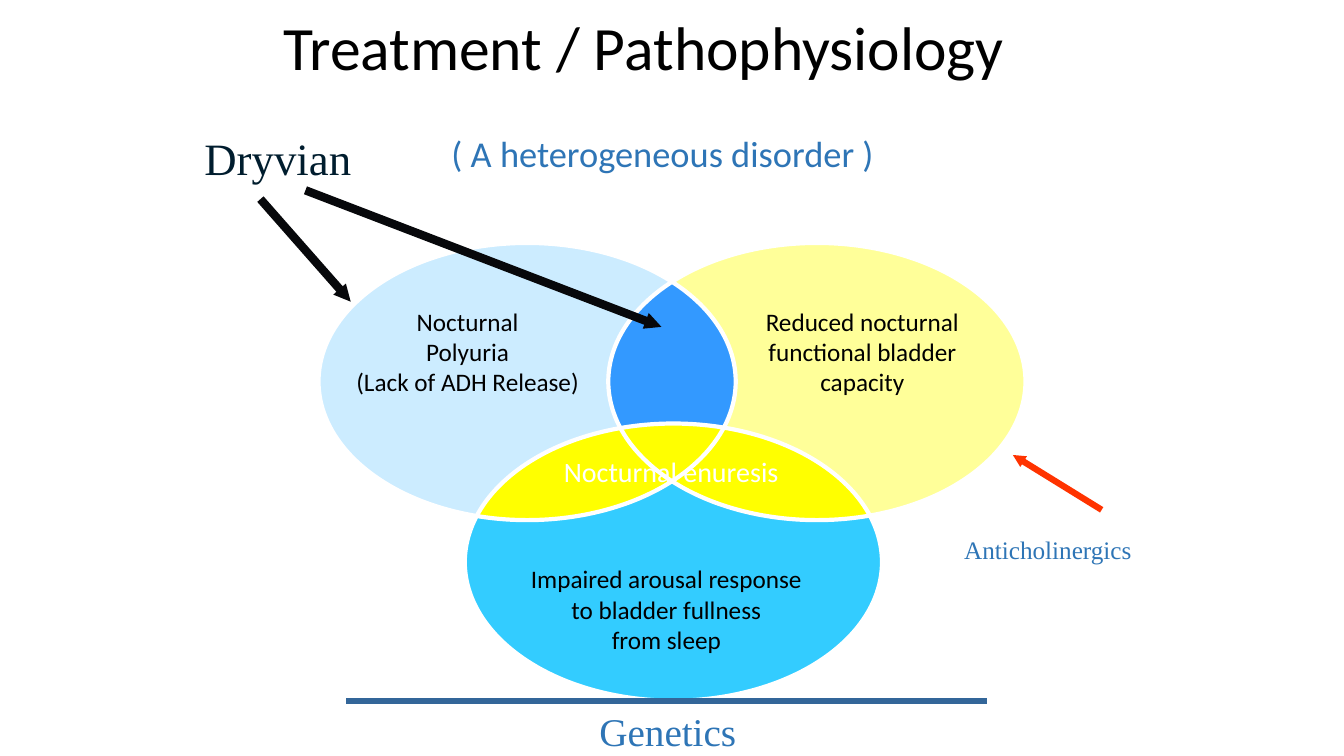
import math
import pptx
import pptx.dml.color
import pptx.enum.shapes
import pptx.enum.text
import pptx.oxml.ns
import pptx.util
from lxml import etree

Pt = pptx.util.Pt

COLORS = {
    "black": "000000", "white": "FFFFFF", "blue text": "2E75B6", "navy": "001D2E",
    "ink": "07080B", "red": "FF3300", "steel": "336699", "cyan": "33CCFF",
    "yellow": "FFFF00", "cream": "FFFF99", "blue": "3399FF", "pale blue": "CCECFF",
}

# The three causes share one ellipse size; each has its own centre.
RADIUS_X, RADIUS_Y = 149, 99
CENTRES = {"arousal": (481, 401.5), "polyuria": (376.5, 272.5), "bladder": (583.5, 272.5)}

# Crossing points: the two ellipses, and which of their two crossings.
CROSSINGS = {
    "top": ("polyuria", "bladder", -1),
    "middle": ("polyuria", "bladder", 1),
    "outer left": ("polyuria", "arousal", 1),
    "inner right": ("polyuria", "arousal", -1),
    "inner left": ("bladder", "arousal", -1),
    "outer right": ("bladder", "arousal", 1),
}

# Each region: colour, then arcs as (ellipse, from, to, turn); turn 1 is clockwise.
REGIONS = [
    ("cyan", [("arousal", "outer left", "outer right", -1),
              ("bladder", "outer right", "middle", 1),
              ("polyuria", "middle", "outer left", 1)]),
    ("yellow", [("arousal", "outer left", "inner left", 1),
                ("bladder", "inner left", "middle", -1),
                ("polyuria", "middle", "outer left", 1)]),
    ("yellow", [("polyuria", "middle", "inner right", -1),
                ("arousal", "inner right", "outer right", 1),
                ("bladder", "outer right", "middle", 1)]),
    ("cream", [("bladder", "top", "outer right", 1),
               ("arousal", "outer right", "inner right", -1),
               ("polyuria", "inner right", "top", -1)]),
    ("yellow", [("arousal", "inner left", "inner right", 1),
                ("polyuria", "inner right", "middle", 1),
                ("bladder", "middle", "inner left", 1)]),
    ("blue", [("polyuria", "top", "inner right", 1),
              ("arousal", "inner right", "inner left", -1),
              ("bladder", "inner left", "top", 1)]),
    ("pale blue", [("polyuria", "outer left", "top", 1),
                   ("bladder", "top", "inner left", -1),
                   ("arousal", "inner left", "outer left", -1)]),
]

# Lines of text, box (left, top, width, height), size, font, colour, wraps, anchor
HEADINGS = [
    (["( A heterogeneous disorder )"], (314, 90, 319, 39), 26, "Calibri", "blue text", False, "TOP"),
    (["Treatment / Pathophysiology"], (120, 0, 680, 66), 44, "Calibri", "black", True, "MIDDLE"),
]
LABELS = [
    (["Nocturnal", "Polyuria", "(Lack of ADH Release)"],
     (246, 215, 176, 73), 18, "Calibri", "black", False, "TOP"),
    (["Reduced nocturnal", "functional bladder", "capacity"],
     (537, 215, 158, 73), 18, "Calibri", "black", False, "TOP"),
    (["Nocturnal enuresis"], (331, 321, 297, 31), 20, "Calibri", "white", True, "TOP"),
    (["Impaired arousal response", "to bladder fullness", "from sleep"],
     (371, 399, 210, 73), 18, "Calibri", "black", False, "TOP"),
    (["Genetics"], (339, 504, 276, 36), 28, "Times New Roman", "blue text", False, "MIDDLE"),
    (["Dryvian"], (128, 90, 141, 46), 32, "Times New Roman", "navy", False, "TOP"),
    (["Anticholinergics"], (681, 378, 135, 29), 18, "Times New Roman", "blue text", False, "TOP"),
]

# From, to, colour, width, arrowhead
LINES = [
    ((247.5, 500.5), (705, 500.5), "steel", 4.5, False),
    ((188, 144.5), (250.5, 215.5), "ink", 6, True),
    ((221, 137), (472.5, 233.5), "ink", 6, True),
    ((785, 363), (723.5, 325), "red", 4.5, True),
]


def rgb(name):
    return pptx.dml.color.RGBColor.from_string(COLORS[name])


def crossing_point(name):
    """Solve in units of the radii, where the ellipses are unit circles."""
    first, second, side = CROSSINGS[name]
    (x1, y1), (x2, y2) = CENTRES[first], CENTRES[second]
    dx, dy = (x2 - x1) / RADIUS_X, (y2 - y1) / RADIUS_Y
    gap = math.hypot(dx, dy)
    height = side * math.sqrt(1 - gap ** 2 / 4) / gap
    if dx < 0:
        height = -height
    return (x1 + (dx / 2 - dy * height) * RADIUS_X,
            y1 + (dy / 2 + dx * height) * RADIUS_Y)


def arc_points(ellipse, start, end, turn, steps=24):
    cx, cy = CENTRES[ellipse]
    a, b = [math.atan2((y - cy) / RADIUS_Y, (x - cx) / RADIUS_X)
            for x, y in (crossing_point(start), crossing_point(end))]
    sweep = turn * ((turn * (b - a)) % math.tau)
    angles = [a + sweep * i / steps for i in range(steps)]
    return [(Pt(cx + RADIUS_X * math.cos(t)), Pt(cy + RADIUS_Y * math.sin(t))) for t in angles]


def add_region(s, color, arcs):
    points = [point for arc in arcs for point in arc_points(*arc)]
    builder = s.shapes.build_freeform(*points[0])
    builder.add_line_segments(points[1:], close=True)
    sp = builder.convert_to_shape()
    sp.shadow.inherit = False
    sp.fill.solid()
    sp.fill.fore_color.rgb = rgb(color)
    sp.line.fill.background()


def add_outline(s, centre):
    cx, cy = centre
    sp = s.shapes.add_shape(pptx.enum.shapes.MSO_SHAPE.OVAL, Pt(cx - RADIUS_X), Pt(cy - RADIUS_Y),
                            Pt(2 * RADIUS_X), Pt(2 * RADIUS_Y))
    sp.shadow.inherit = False
    sp.fill.background()
    sp.line.color.rgb = rgb("white")
    sp.line.width = Pt(3)


def add_text(s, lines, box, size, font, color, wraps, anchor):
    tf = s.shapes.add_textbox(*map(Pt, box)).text_frame
    tf.word_wrap = wraps
    tf.vertical_anchor = pptx.enum.text.MSO_ANCHOR[anchor]
    for i, line in enumerate(lines):
        p = tf.add_paragraph() if i else tf.paragraphs[0]
        p.alignment = pptx.enum.text.PP_ALIGN.CENTER
        r = p.add_run()
        r.text = line
        r.font.size = Pt(size)
        r.font.name = font
        r.font.color.rgb = rgb(color)


def add_line(s, start, end, color, width, arrow):
    line = s.shapes.add_connector(pptx.enum.shapes.MSO_CONNECTOR.STRAIGHT,
                                  *map(Pt, start + end))
    line.line.color.rgb = rgb(color)
    line.line.width = Pt(width)
    if arrow:
        ln = line.line._get_or_add_ln()
        ln.set("cap", "sq")
        etree.SubElement(ln, pptx.oxml.ns.qn("a:tailEnd"), type="triangle", w="sm", len="sm")
    etree.SubElement(line._element.spPr, pptx.oxml.ns.qn("a:effectLst"))


def main():
    prs = pptx.Presentation()
    prs.slide_width, prs.slide_height = Pt(960), Pt(540)
    s = prs.slides.add_slide(prs.slide_layouts[6])
    for region in REGIONS:
        add_region(s, *region)
    for heading in HEADINGS:
        add_text(s, *heading)
    for centre in CENTRES.values():
        add_outline(s, centre)
    for label in LABELS:
        add_text(s, *label)
    for line in LINES:
        add_line(s, *line)
    prs.save("out.pptx")


if __name__ == "__main__":
    main()
